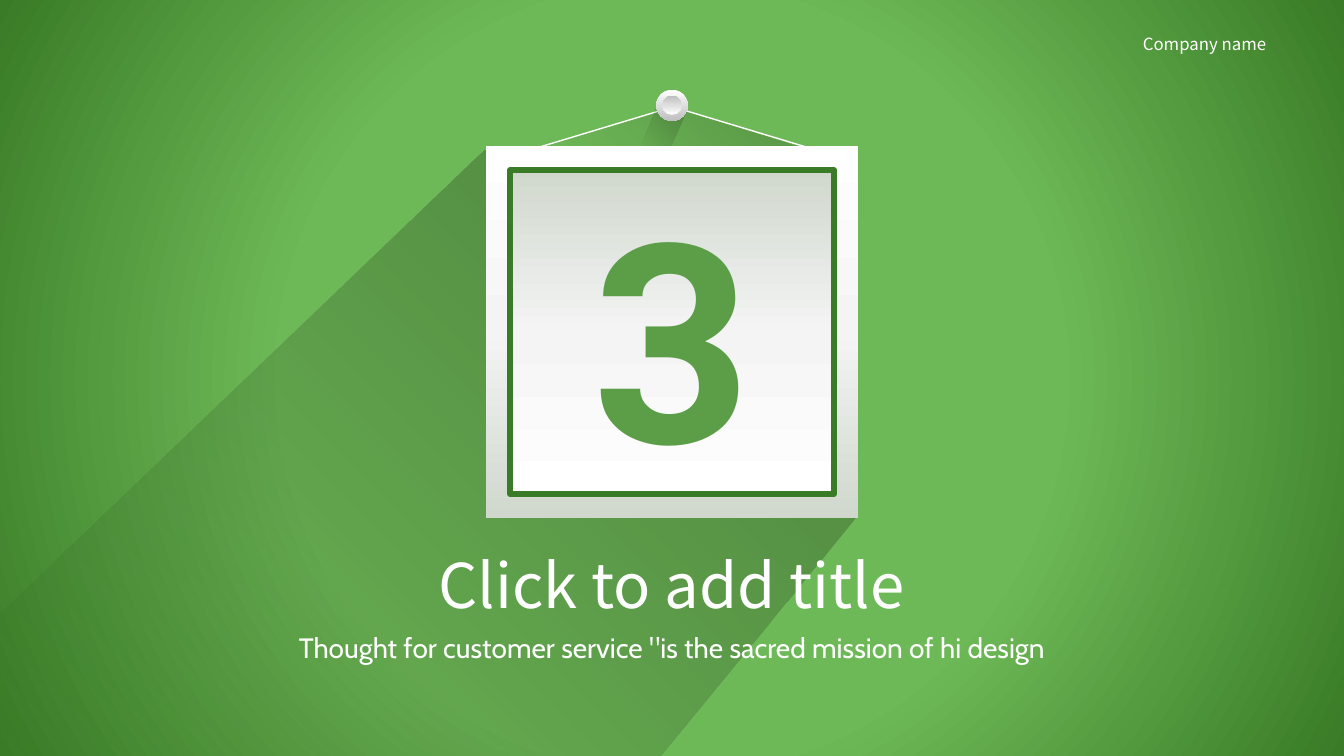
from dataclasses import dataclass

from lxml import etree
from pptx import Presentation
from pptx.dml.color import RGBColor
from pptx.enum.shapes import MSO_SHAPE
from pptx.enum.text import MSO_ANCHOR, MSO_AUTO_SIZE, PP_ALIGN
from pptx.oxml.ns import qn
from pptx.util import Emu, Inches, Pt

RECT, OVAL = MSO_SHAPE.RECTANGLE, MSO_SHAPE.OVAL
ROOF = MSO_SHAPE.ISOSCELES_TRIANGLE
LEFT, MID = PP_ALIGN.LEFT, PP_ALIGN.CENTER
CORE, GROW = MSO_ANCHOR.MIDDLE, MSO_AUTO_SIZE.SHAPE_TO_FIT_TEXT
WIDE, HIGH = Inches(13.333), Inches(7.5)
SANS, CABIN, BOLD = "Noto Sans CJK SC", "Cabin", "Roboto"
WHITE, DARK, LEAF, DIGIT = "FFFFFF", "397B26", "6EB957", "5B9E47"


@dataclass
class Stop:
    pos: int
    tint: str
    alpha: int = 100


@dataclass
class Fade:
    stops: list[Stop]
    angle: int | None  # None makes a round fade from the centre


@dataclass
class Tile:  # square centred across the slide; row and size in % of its height
    kind: int
    row: float
    size: float
    fade: Fade
    edge: str = ""


@dataclass
class Label:  # place in % of the slide
    text: str
    box: tuple[float, float, float, float]
    size: int
    face: str
    align: int


METAL = [Stop(0, WHITE), Stop(100, "BFBFBF")]
PAPER = [Stop(0, WHITE), Stop(50, "F4F4F4"), Stop(100, "D0D8CD")]
GLOW = Fade([Stop(50, LEAF), Stop(100, DARK)], None)

NAIL = [
    Tile(OVAL, 13.93, 4.13, Fade(METAL, 90)),
    Tile(OVAL, 13.93, 2.53, Fade(METAL, 270)),
]
FRAME = [
    Tile(RECT, 43.93, 49.2, Fade(PAPER, 90)),
    Tile(RECT, 43.93, 42.8, Fade(PAPER, 270), DARK),
]
LABELS = [
    Label("Company name", (84.3, 3.87, 11.7, 4), 12, SANS, LEFT),
    Label("Click to add title", (31, 71.73, 37.95, 11.2), 44, SANS, MID),
    Label('Thought for customer service "is the sacred mission of hi design',
          (21.2, 82.8, 57.6, 5.87), 20, CABIN, MID),
]
LONG = [(36.08, 19.73), (63.68, 68.4), (49.13, 100), (0, 100), (0, 81.07)]
SHORT = [(47.55, 19.47), (48.9, 13.73), (51.08, 14.67), (49.88, 19.47)]


def across(share: float) -> Emu:
    return Emu(round(WIDE * share / 100))


def down(share: float) -> Emu:
    return Emu(round(HIGH * share / 100))


def paint(code: str) -> RGBColor:
    return RGBColor.from_string(code)


def blend(fill, host, fade: Fade) -> None:
    """Put a gradient in place of the solid fill of host."""
    fill.solid()
    grad = etree.Element(qn("a:gradFill"), rotWithShape="1")
    stops = etree.SubElement(grad, qn("a:gsLst"))
    for stop in fade.stops:
        mark = etree.SubElement(stops, qn("a:gs"), pos=str(stop.pos * 1000))
        tint = etree.SubElement(mark, qn("a:srgbClr"), val=stop.tint)
        if stop.alpha < 100:
            etree.SubElement(tint, qn("a:alpha"), val=str(stop.alpha * 1000))
    if fade.angle is None:
        way = etree.SubElement(grad, qn("a:path"), path="circle")
        etree.SubElement(way, qn("a:fillToRect"),
                         dict.fromkeys("ltrb", "50000"))
    else:
        etree.SubElement(grad, qn("a:lin"), ang=str(fade.angle * 60000),
                         scaled="0")
    host.replace(host.find(qn("a:solidFill")), grad)


def style(shape, fade: Fade | None, edge: str = "", width: float = 1) -> None:
    shape.shadow.inherit = False
    if fade:
        blend(shape.fill, shape.element.spPr, fade)
    else:
        shape.fill.background()
    if edge:
        shape.line.color.rgb = paint(edge)
        shape.line.width = Pt(width)
    else:
        shape.line.fill.background()


def shade(alpha: int) -> Fade:
    return Fade([Stop(0, "000000", alpha), Stop(100, "000000", 0)], 135)


def cast(slide, spots: list[tuple[float, float]], alpha: int) -> None:
    first, *rest = [(across(x), down(y)) for x, y in spots]
    pen = slide.shapes.build_freeform(*first, scale=1.0)
    pen.add_line_segments(rest, close=True)
    style(pen.convert_to_shape(), shade(alpha))


def roof(slide, col: float, fade: Fade | None, edge: str = "") -> None:
    shape = slide.shapes.add_shape(ROOF, across(col), down(14.13),
                                   across(19.88), down(5.33))
    style(shape, fade, edge)


def tile(slide, part: Tile):
    side = down(part.size)
    shape = slide.shapes.add_shape(part.kind, (WIDE - side) // 2,
                                   down(part.row) - side // 2, side, side)
    style(shape, part.fade, part.edge, 4.5)
    return shape


def write(frame, text: str, size: int, face: str, code: str, align: int):
    para = frame.paragraphs[0]
    para.alignment = align
    run = para.add_run()
    run.text = text
    run.font.size, run.font.name = Pt(size), face
    run.font.color.rgb = paint(code)
    return run


def label(slide, item: Label) -> None:
    x, y, w, h = item.box
    box = slide.shapes.add_textbox(across(x), down(y), across(w), down(h))
    frame = box.text_frame
    frame.word_wrap = False
    frame.auto_size = GROW
    write(frame, item.text, item.size, item.face, WHITE, item.align)


def main() -> None:
    deck = Presentation()
    deck.slide_width, deck.slide_height = WIDE, HIGH
    slide = deck.slides.add_slide(deck.slide_layouts[6])

    # Background
    fill = slide.background.fill
    fill.solid()
    blend(fill, slide.element.find(".//" + qn("p:bgPr")), GLOW)

    # Shadows, string and nail
    cast(slide, LONG, 30)
    roof(slide, 40.05, shade(20))
    roof(slide, 40.13, None, WHITE)
    cast(slide, SHORT, 20)
    for part in NAIL:
        tile(slide, part)

    # Frame and number
    _, card = [tile(slide, part) for part in FRAME]
    card.text_frame.vertical_anchor = CORE
    write(card.text_frame, "3", 199, BOLD, DIGIT, MID).font.bold = True

    # Texts
    for item in LABELS:
        label(slide, item)

    deck.save("out.pptx")


if __name__ == "__main__":
    main()
